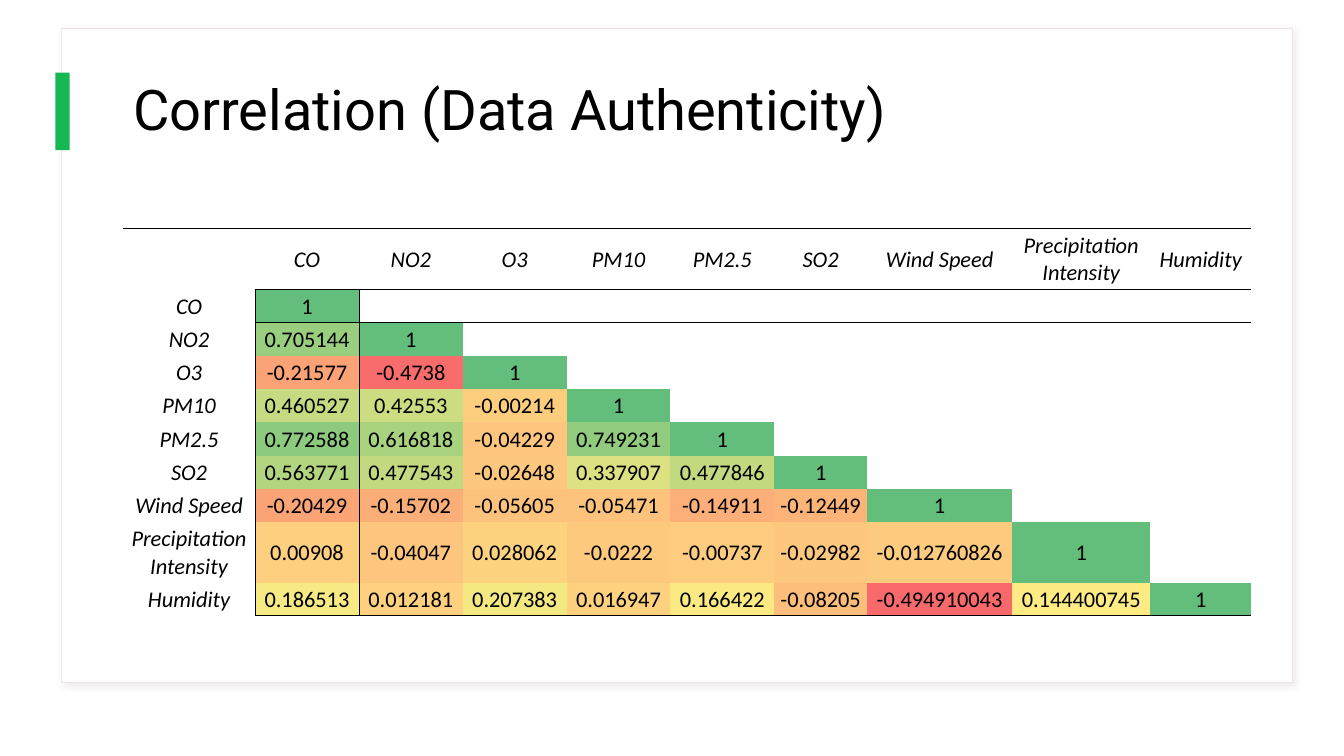
import lxml.etree
import pptx
import pptx.dml.color
import pptx.enum.shapes
import pptx.enum.text
import pptx.oxml.ns
import pptx.util

TITLE = "Correlation (Data Authenticity)"
MEASURES = ["CO", "NO2", "O3", "PM10", "PM2.5", "SO2", "Wind Speed",
            "Precipitation Intensity", "Humidity"]
# Lower triangle, one row per measure
CORRELATIONS = [
    ["1"],
    ["0.705144", "1"],
    ["-0.21577", "-0.4738", "1"],
    ["0.460527", "0.42553", "-0.00214", "1"],
    ["0.772588", "0.616818", "-0.04229", "0.749231", "1"],
    ["0.563771", "0.477543", "-0.02648", "0.337907", "0.477846", "1"],
    ["-0.20429", "-0.15702", "-0.05605", "-0.05471", "-0.14911", "-0.12449", "1"],
    ["0.00908", "-0.04047", "0.028062", "-0.0222", "-0.00737", "-0.02982",
     "-0.012760826", "1"],
    ["0.186513", "0.012181", "0.207383", "0.016947", "0.166422", "-0.08205",
     "-0.494910043", "0.144400745", "1"],
]

RGB = pptx.dml.color.RGBColor
BLACK, WHITE = RGB(0, 0, 0), RGB(255, 255, 255)
CARD_EDGE, CARD_SHADOW = RGB(0xF0, 0xE5, 0xE5), RGB(0xCA, 0xBC, 0xC5)
ACCENT = RGB(0x16, 0xB8, 0x54)
LOW, MIDDLE, HIGH = RGB(0xF8, 0x69, 0x6B), RGB(0xFF, 0xEB, 0x84), RGB(0x63, 0xBE, 0x7B)

WIDTH, HEIGHT = 13.33, 7.5
CARD = (0.61, 0.28, 12.21, 6.49)
TITLE_BOX = (1.22, 0.56, 11.19, 1.11)
ACCENT_BAR = (0.55, 0.72, 0.14, 0.77)
TABLE_LEFT, TABLE_TOP = 1.22, 2.27
COLUMN_WIDTHS = [1.31] + [1.03] * 5 + [0.92, 1.44, 1.37, 1]
ROW_HEIGHTS = [0.6] + [0.33] * 7 + [0.6, 0.33]
NO_GRID_STYLE = "{2D5ABB26-0587-4C30-8999-92F81FD0307C}"

inches = pptx.util.Inches
qn = pptx.oxml.ns.qn


def scale_color(value):
    """Three-colour scale: red at the minimum, yellow in the middle, green at 1."""
    low, middle, high = -0.494910043, 0.144400745, 1
    if value < middle:
        start, end, share = LOW, MIDDLE, (value - low) / (middle - low)
    else:
        start, end, share = MIDDLE, HIGH, (value - middle) / (high - middle)
    return RGB(*(round(a + (b - a) * share) for a, b in zip(start, end)))


def add_rectangle(slide, box, color):
    rectangle = slide.shapes.add_shape(
        pptx.enum.shapes.MSO_SHAPE.RECTANGLE, *map(inches, box))
    rectangle.fill.solid()
    rectangle.fill.fore_color.rgb = color
    rectangle.line.fill.background()
    rectangle.shadow.inherit = False
    return rectangle


def add_card(slide):
    card = add_rectangle(slide, CARD, WHITE)
    card.line.color.rgb = CARD_EDGE
    card.line.width = pptx.util.Pt(1)
    effects = card._element.spPr.find(qn("a:effectLst"))
    shadow = lxml.etree.SubElement(
        effects, qn("a:outerShdw"), blurRad=str(pptx.util.Pt(4)),
        dist=str(pptx.util.Pt(3)), dir=str(45 * 60000), algn="tl", rotWithShape="0")
    color = lxml.etree.SubElement(shadow, qn("a:srgbClr"), val=str(CARD_SHADOW))
    lxml.etree.SubElement(color, qn("a:alpha"), val="30000")


def write(paragraph, text, size, font, italic=None):
    run = paragraph.add_run()
    run.text = text
    run.font.size = pptx.util.Pt(size)
    run.font.name = font
    run.font.italic = italic
    run.font.color.rgb = BLACK


def cell_borders(row, column):
    """Line widths in points by side, in the order the file format wants."""
    last = len(MEASURES)
    borders = {}
    if row and column == 1:
        borders["L"] = 0.5
    if row and column == 0:
        borders["R"] = 0.5
    if row == 0:
        borders["T"] = 1
    elif row == 1 and column:
        borders["T"] = 0.5
    if column and row in (0, last):
        borders["B"] = 1 if row == last else 0.5
    return borders


def format_cell(cell, row, column):
    cell.vertical_anchor = pptx.enum.text.MSO_ANCHOR.MIDDLE
    cell.margin_left = cell.margin_right = cell.margin_top = inches(0.01)
    cell.margin_bottom = 0
    properties = cell._tc.get_or_add_tcPr()
    for side, width in cell_borders(row, column).items():
        line = lxml.etree.SubElement(
            properties, qn("a:ln" + side), w=str(pptx.util.Pt(width)))
        fill = lxml.etree.SubElement(line, qn("a:solidFill"))
        lxml.etree.SubElement(fill, qn("a:srgbClr"), val=str(BLACK))
    cell.fill.background()


def add_matrix(slide):
    matrix = slide.shapes.add_table(
        len(ROW_HEIGHTS), len(COLUMN_WIDTHS), inches(TABLE_LEFT), inches(TABLE_TOP),
        inches(sum(COLUMN_WIDTHS)), inches(sum(ROW_HEIGHTS))).table
    matrix.first_row = matrix.horz_banding = False
    matrix._tbl.tblPr.find(qn("a:tableStyleId")).text = NO_GRID_STYLE
    for column, width in zip(matrix.columns, COLUMN_WIDTHS):
        column.width = inches(width)
    for row, height in zip(matrix.rows, ROW_HEIGHTS):
        row.height = inches(height)

    grid = [[""] + MEASURES]
    grid += [[name] + values for name, values in zip(MEASURES, CORRELATIONS)]
    for r, texts in enumerate(grid):
        for c in range(len(COLUMN_WIDTHS)):
            cell = matrix.cell(r, c)
            format_cell(cell, r, c)
            if c >= len(texts) or not texts[c]:
                continue
            is_label = r == 0 or c == 0
            paragraph = cell.text_frame.paragraphs[0]
            paragraph.alignment = pptx.enum.text.PP_ALIGN.CENTER
            write(paragraph, texts[c], 16, "Calibri", is_label)
            if not is_label:
                cell.fill.solid()
                cell.fill.fore_color.rgb = scale_color(float(texts[c]))


def add_title(slide):
    title = slide.shapes.title
    title.left, title.top, title.width, title.height = map(inches, TITLE_BOX)
    title.text_frame.vertical_anchor = pptx.enum.text.MSO_ANCHOR.MIDDLE
    paragraph = title.text_frame.paragraphs[0]
    paragraph.alignment = pptx.enum.text.PP_ALIGN.LEFT
    paragraph.line_spacing = 0.9
    write(paragraph, TITLE, 40, "Roboto")
    slide.shapes._spTree.append(title._element)  # bring in front of the card


def main():
    deck = pptx.Presentation()
    deck.slide_width, deck.slide_height = inches(WIDTH), inches(HEIGHT)
    slide = deck.slides.add_slide(deck.slide_layouts.get_by_name("Title Only"))
    add_card(slide)
    add_title(slide)
    add_rectangle(slide, ACCENT_BAR, ACCENT)
    add_matrix(slide)
    deck.save("out.pptx")


if __name__ == "__main__":
    main()
